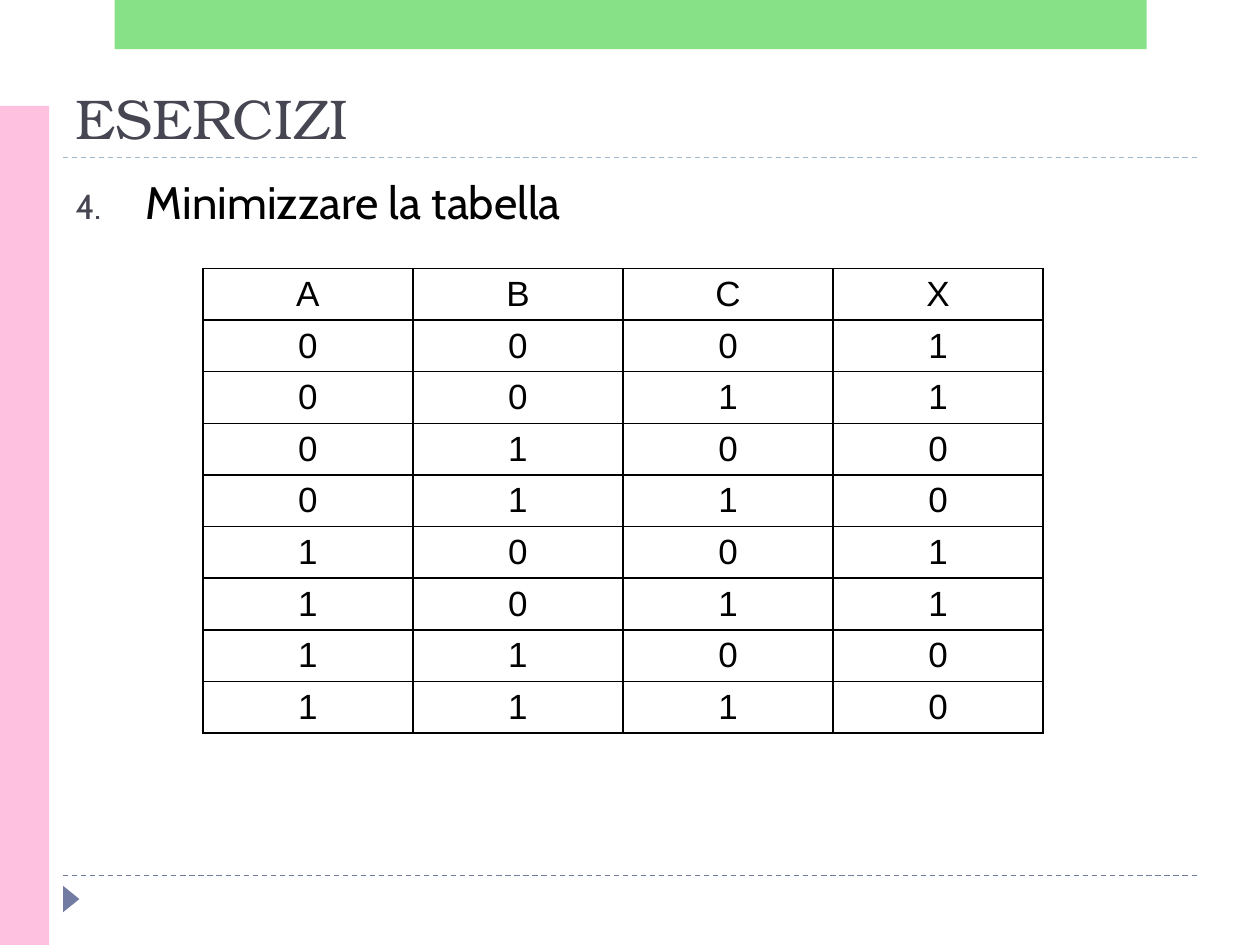
import itertools
from dataclasses import dataclass

import pptx
import pptx.dml.color
import pptx.enum.dml
import pptx.enum.shapes
import pptx.enum.text
import pptx.oxml
import pptx.oxml.ns
import pptx.util

COLOURS = {
    "title": "464653",
    "text": "000000",
    "footer": "727CA3",
    "rule": "9FB8CD",
    "side": "FFC1E0",
    "top": "62D862",
}
WIDTH, HEIGHT = pptx.util.Inches(10), pptx.util.Inches(7.5)
NAMESPACE = pptx.oxml.ns.nsdecls("a")
SHAPES = pptx.enum.shapes.MSO_SHAPE
ALIGN = pptx.enum.text.PP_ALIGN
ANCHOR = pptx.enum.text.MSO_ANCHOR


@dataclass(frozen=True)
class Area:
    """Left, top, width and height in percent of the slide."""
    left: float
    top: float
    width: float
    height: float

    def emu(self) -> tuple[int, int, int, int]:
        return (across(self.left), down(self.top),
                across(self.width), down(self.height))


@dataclass(frozen=True)
class Ornament:
    kind: int
    area: Area
    colour: str
    rotation: float = 0
    opacity: int = 100


@dataclass(frozen=True)
class Rule:
    top: float
    colour: str


ORNAMENTS = [
    Ornament(SHAPES.ISOSCELES_TRIANGLE, Area(4.6, 94.27, 2.1, 1.73), "footer", rotation=90),
    Ornament(SHAPES.RECTANGLE, Area(0, 11.2, 3.9, 88.8), "side"),
    Ornament(SHAPES.RECTANGLE, Area(9.1, 0, 81.9, 5.2), "top", opacity=76),
]
RULES = [Rule(92.67, "footer"), Rule(16.67, "rule")]
TITLE_AREA = Area(5, 7.33, 90, 9.33)
EXERCISE_AREA = Area(5, 17.73, 90, 72)
TABLE_AREA = Area(16.1, 28.4, 66.7, 49.2)
X_COLUMN = "11001100"


def across(percent: float) -> int:
    return round(WIDTH * percent / 100)


def down(percent: float) -> int:
    return round(HEIGHT * percent / 100)


def rgb(name: str) -> pptx.dml.color.RGBColor:
    return pptx.dml.color.RGBColor.from_string(COLOURS[name])


def add_xml(parent, xml: str) -> None:
    """Append one DrawingML element, given without its namespace."""
    tag, rest = xml[1:].split(" ", 1)
    parent.append(pptx.oxml.parse_xml(f"<{tag} {NAMESPACE} {rest}"))


def draw_ornament(slide, ornament: Ornament) -> None:
    shape = slide.shapes.add_shape(ornament.kind, *ornament.area.emu())
    shape.rotation = ornament.rotation
    shape.shadow.inherit = False
    shape.line.fill.background()
    shape.fill.solid()
    shape.fill.fore_color.rgb = rgb(ornament.colour)
    if ornament.opacity < 100:
        colour = shape.fill._xPr.find(".//" + pptx.oxml.ns.qn("a:srgbClr"))
        add_xml(colour, f'<a:alpha val="{ornament.opacity * 1000}"/>')


def draw_rule(slide, rule: Rule) -> None:
    line = slide.shapes.add_connector(
        pptx.enum.shapes.MSO_CONNECTOR.STRAIGHT,
        across(5), down(rule.top), across(95), down(rule.top))
    line.line.color.rgb = rgb(rule.colour)
    line.line.width = pptx.util.Pt(0.75)
    line.line.dash_style = pptx.enum.dml.MSO_LINE.DASH
    add_xml(line._element.spPr, "<a:effectLst />")


def write(frame, text: str, *, font: str, size: float, colour: str = "text",
          align=ALIGN.LEFT, anchor=ANCHOR.TOP, number: int = 0) -> None:
    """Fill a text frame with one paragraph, numbered if number is given."""
    frame.word_wrap = True
    frame.vertical_anchor = anchor
    paragraph = frame.paragraphs[0]
    paragraph.text = text
    paragraph.alignment = align
    if number:
        properties = paragraph._p.get_or_add_pPr()
        indent = pptx.util.Inches(0.56)
        properties.set("marL", str(indent))
        properties.set("indent", str(-indent))
        add_xml(properties, f'<a:buClr ><a:srgbClr val="{COLOURS["title"]}"/></a:buClr>')
        add_xml(properties, '<a:buSzPct val="76000"/>')
        add_xml(properties, f'<a:buAutoNum type="arabicPeriod" startAt="{number}"/>')
    run_font = paragraph.runs[0].font
    run_font.name = font
    run_font.size = pptx.util.Pt(size)
    run_font.color.rgb = rgb(colour)


def add_text(slide, area: Area, text: str, **text_format) -> None:
    write(slide.shapes.add_textbox(*area.emu()).text_frame, text, **text_format)


def style_cell(cell) -> None:
    cell.margin_top = cell.margin_bottom = pptx.util.Inches(0.03)
    properties = cell._tc.get_or_add_tcPr()
    for side in ("lnL", "lnR", "lnT", "lnB"):
        add_xml(properties, f'<a:{side} w="12700"><a:solidFill><a:srgbClr '
                            f'val="{COLOURS["text"]}"/></a:solidFill></a:{side}>')
    cell.fill.background()


def draw_truth_table(slide) -> None:
    inputs = itertools.product("01", repeat=3)
    rows = ["ABCX"] + [(*abc, x) for abc, x in zip(inputs, X_COLUMN)]
    table = slide.shapes.add_table(len(rows), len(rows[0]), *TABLE_AREA.emu()).table
    table.first_row = table.horz_banding = False
    for row, values in enumerate(rows):
        for column, value in enumerate(values):
            cell = table.cell(row, column)
            style_cell(cell)
            write(cell.text_frame, value, font="Arial", size=20, align=ALIGN.CENTER)
            cell.vertical_anchor = ANCHOR.MIDDLE


def main() -> None:
    presentation = pptx.Presentation()
    presentation.slide_width, presentation.slide_height = WIDTH, HEIGHT
    slide = presentation.slides.add_slide(presentation.slide_layouts[6])
    for rule in RULES:
        draw_rule(slide, rule)
    for ornament in ORNAMENTS:
        draw_ornament(slide, ornament)
    add_text(slide, TITLE_AREA, "ESERCIZI", font="TeX Gyre Bonum", size=32,
             colour="title", anchor=ANCHOR.BOTTOM)
    add_text(slide, EXERCISE_AREA, "Minimizzare la tabella", font="Cabin", size=26, number=4)
    draw_truth_table(slide)
    presentation.save("out.pptx")


if __name__ == "__main__":
    main()
